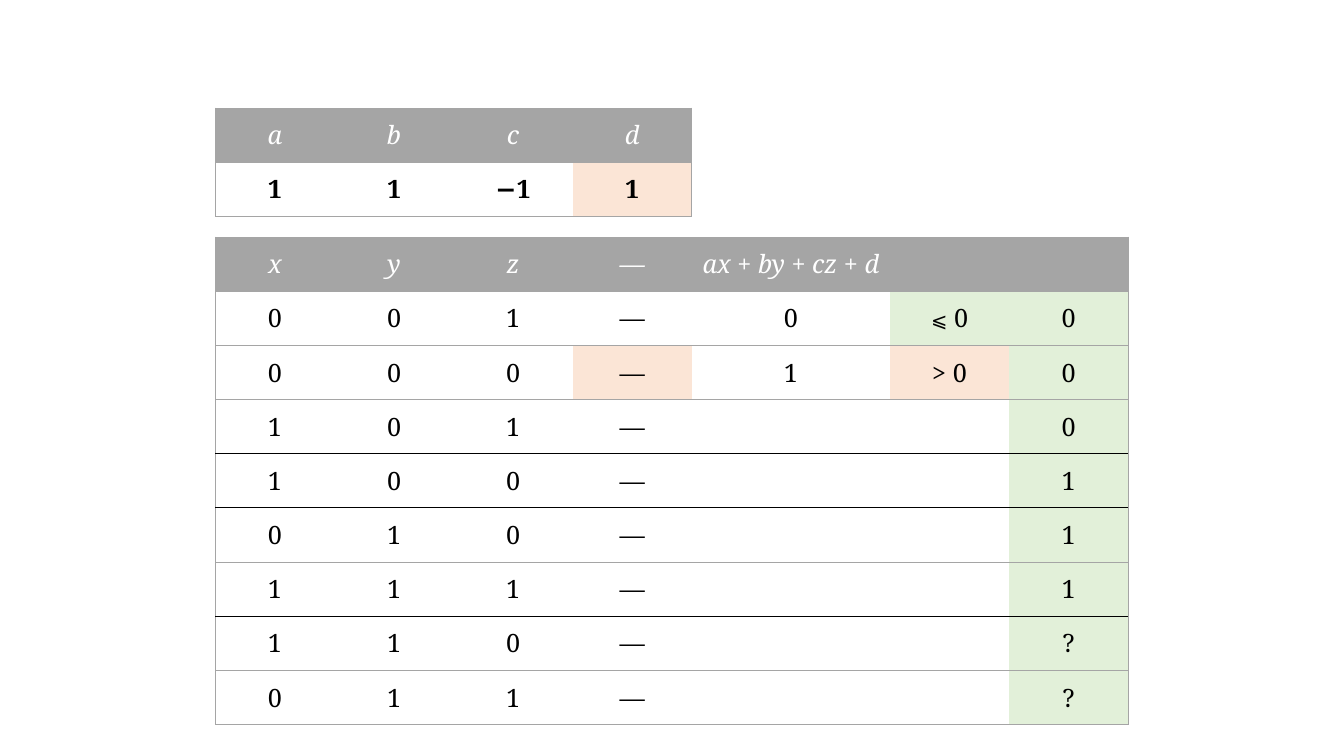
"""Builds a slide with a table of plane coefficients and a truth table below it."""
from lxml.etree import SubElement
from pptx import Presentation
from pptx.dml.color import RGBColor
from pptx.enum.text import MSO_ANCHOR, PP_ALIGN
from pptx.oxml.ns import qn
from pptx.util import Cm, Pt

COLORS = {"gray": "A5A5A5", "black": "000000", "white": "FFFFFF",
          "green": "E2F0D9", "orange": "FBE5D6"}
NO_GRID_STYLE = "{2D5ABB26-0587-4C30-8999-92F81FD0307C}"
FONT = {"name": "Noto Serif", "size": Pt(18)}
FORMATS = {
    "variable": {**FONT, "color": "white", "italic": True},
    "sign": {**FONT, "color": "white"},
    "value": {**FONT, "color": "black"},
    "relation": {**FONT, "color": "black", "size": Pt(14)},
    "coefficient": {**FONT, "color": "black", "bold": True},
}
CELL_LAYOUT = {"margin_left": Cm(0.25), "margin_right": Cm(0.25),
               "margin_top": Cm(0.25), "margin_bottom": Cm(0.25),
               "vertical_anchor": MSO_ANCHOR.MIDDLE}
GRAY_RULE = ("gray", 0.5)
BLACK_RULE = ("black", 1)
NARROW, WIDE, ROW_HEIGHT, LEFT = 3, 5, 1.26, 5.43


class TableSlide:
    """Holds the current slide and the shared table style."""

    def __init__(self, slide):
        self.slide = slide

    def color(self, name):
        """Return the named colour."""
        return RGBColor.from_string(COLORS[name])

    def runs(self, cell, parts):
        """Write centred text made of (text, format name) parts."""
        paragraph = cell.text_frame.paragraphs[0]
        paragraph.alignment = PP_ALIGN.CENTER
        for text, format_name in parts:
            run = paragraph.add_run()
            run.text = text
            for key, value in FORMATS[format_name].items():
                if key == "color":
                    run.font.color.rgb = self.color(value)
                else:
                    setattr(run.font, key, value)

    def borders(self, cell, rules):
        """Draw the given rules, listed in the order left, right, top, bottom."""
        properties = cell._tc.get_or_add_tcPr()
        for position, (side, (color, points)) in enumerate(rules.items()):
            line = SubElement(properties, qn(f"a:ln{side}"), w=str(Pt(points)))
            fill = SubElement(line, qn("a:solidFill"))
            SubElement(fill, qn("a:srgbClr"), val=COLORS[color])
            properties.insert(position, line)

    def table(self, top, widths, rows, body_format, fills, black_after=()):
        """Add a table with a gray header and ruled rows."""
        grid = self.slide.shapes.add_table(
            len(rows), len(widths), Cm(LEFT), Cm(top),
            Cm(sum(widths)), Cm(ROW_HEIGHT * len(rows))).table
        grid.first_row = grid.horz_banding = False
        grid._tbl.tblPr.find(qn("a:tableStyleId")).text = NO_GRID_STYLE
        for column, width in zip(grid.columns, widths):
            column.width = Cm(width)
        for r, row in enumerate(rows):
            rule_above, rule_below = (
                BLACK_RULE if edge in black_after else GRAY_RULE for edge in (r - 1, r))
            for c, content in enumerate(row):
                cell = grid.cell(r, c)
                for key, value in CELL_LAYOUT.items():
                    setattr(cell, key, value)
                if isinstance(content, str):
                    content = [(content, body_format if r else "variable")]
                self.runs(cell, content)
                fill = fills.get((r, c)) if r else "gray"
                if fill:
                    cell.fill.solid()
                    cell.fill.fore_color.rgb = self.color(fill)
                rules = {"L": GRAY_RULE} if c == 0 else {}
                if c == len(widths) - 1:
                    rules["R"] = GRAY_RULE
                self.borders(cell, {**rules, "T": rule_above, "B": rule_below})


def main():
    """Build and save the slide."""
    deck = Presentation()
    deck.slide_width, deck.slide_height = Cm(33.87), Cm(19.05)
    page = TableSlide(deck.slides.add_slide(deck.slide_layouts[6]))

    formula = [("ax", "variable"), (" + ", "sign"), ("by", "variable"),
               (" + ", "sign"), ("cz", "variable"), (" + ", "sign"), ("d", "variable")]
    at_most_zero = [("⩽", "relation"), (" 0", "value")]
    checks = {0: ("0", at_most_zero), 1: ("1", "> 0")}
    points = ["001", "000", "101", "100", "010", "111", "110", "011"]
    truth_rows = [["x", "y", "z", "—", formula, [], []]]
    for index, (point, outcome) in enumerate(zip(points, "000111??")):
        truth_rows.append([*point, "—", *checks.get(index, ([], [])), outcome])
    truth_fills = {(r, 6): "green" for r in range(1, len(truth_rows))}
    truth_fills |= {(1, 5): "green", (2, 3): "orange", (2, 5): "orange"}

    page.table(5.97, [NARROW] * 4 + [WIDE] + [NARROW] * 2, truth_rows,
               "value", truth_fills, black_after=(3, 4, 6))
    page.table(2.72, [NARROW] * 4, ["abcd", ["1", "1", "−1", "1"]],
               "coefficient", {(1, 3): "orange"})
    deck.save("out.pptx")


if __name__ == "__main__":
    main()
